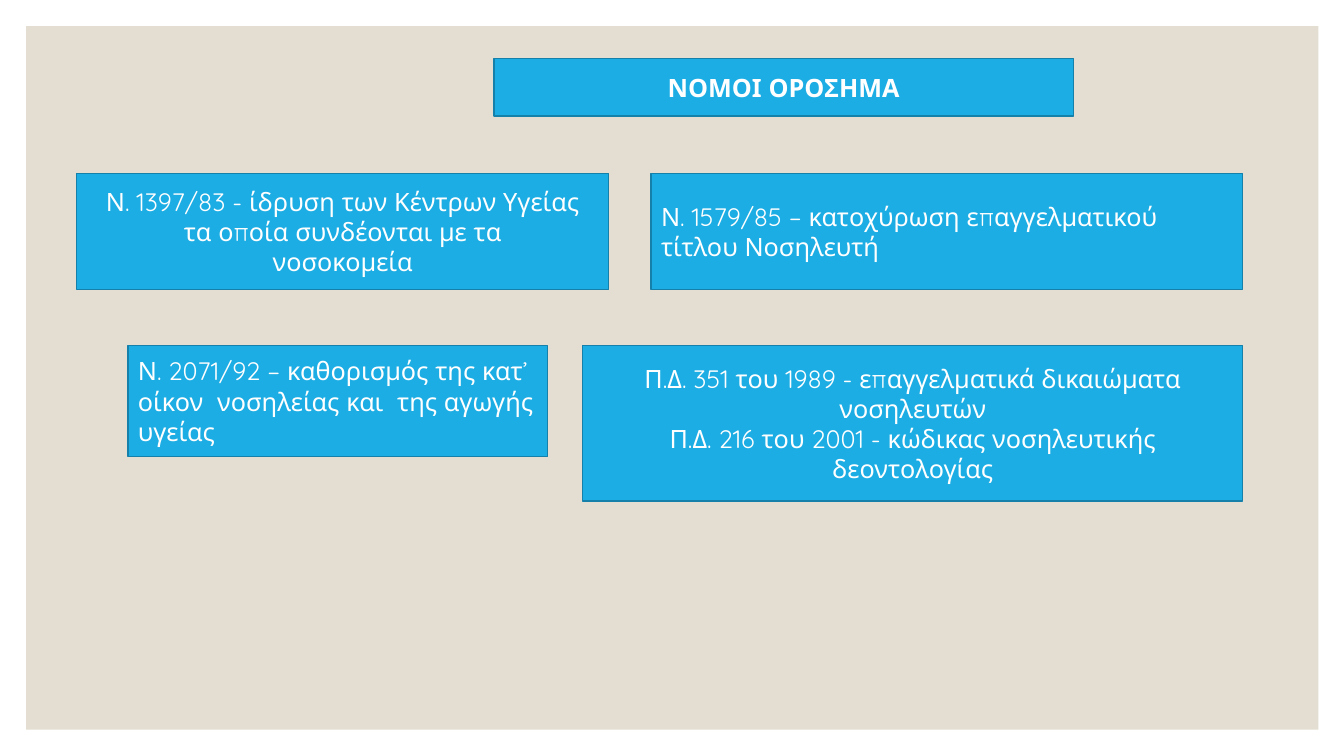
from dataclasses import dataclass

from pptx import Presentation
from pptx.dml.color import RGBColor
from pptx.enum.shapes import MSO_SHAPE
from pptx.enum.text import MSO_ANCHOR, MSO_AUTO_SIZE, PP_ALIGN
from pptx.util import Pt

RECT = MSO_SHAPE.RECTANGLE
MIDDLE = MSO_ANCHOR.MIDDLE
NO_FIT = MSO_AUTO_SIZE.NONE
LEFT, CENTER = PP_ALIGN.LEFT, PP_ALIGN.CENTER

FONT = "Quicksand"
SAND, BLUE, EDGE, WHITE = "E3DED1", "1CADE4", "1580A9", "FFFFFF"
ROW_1, ROW_2 = 123.84, 246.96  # tops of the two rows of laws


@dataclass
class Box:
    left: float
    top: float
    width: float
    height: float
    lines: list[str]
    align: PP_ALIGN = CENTER
    bold: bool = False


TITLE = Box(352.8, 41.76, 414, 41.04, ["ΝΟΜΟΙ ΟΡΟΣΗΜΑ"], bold=True)
LAWS = [
    Box(54.72, ROW_1, 380.16, 82.8,
        ["Ν. 1397/83 - ίδρυση των Κέντρων Υγείας",
         "τα οποία συνδέονται με τα",
         "νοσοκομεία"]),
    Box(465.12, ROW_1, 422.64, 82.8,
        ["Ν. 1579/85 – κατοχύρωση επαγγελματικού τίτλου Νοσηλευτή"], LEFT),
    Box(91.44, ROW_2, 299.52, 79.2,
        ["Ν. 2071/92 – καθορισμός της κατ’ οίκον  νοσηλείας και  της αγωγής υγείας"],
        LEFT),
    Box(416.16, ROW_2, 471.6, 110.88,
        ["Π.Δ. 351 του 1989 - επαγγελματικά δικαιώματα νοσηλευτών",
         "Π.Δ. 216 του 2001 - κώδικας νοσηλευτικής δεοντολογίας"]),
]


def paint(target, color: str) -> None:
    """Give a fill one solid colour."""
    target.solid()
    target.fore_color.rgb = RGBColor.from_string(color)


def add_rect(slide, left: float, top: float, width: float, height: float):
    shape = slide.shapes.add_shape(RECT, Pt(left), Pt(top), Pt(width), Pt(height))
    shape.shadow.inherit = False
    return shape


def dress(shape, box: Box) -> None:
    """Fill and outline a shape, and set its text."""
    paint(shape.fill, BLUE)
    paint(shape.line.fill, EDGE)
    shape.line.width = Pt(1)
    frame = shape.text_frame
    frame.text = "\n".join(box.lines)
    frame.word_wrap = True
    frame.auto_size = NO_FIT
    frame.vertical_anchor = MIDDLE
    for par in frame.paragraphs:
        par.alignment = box.align
        par.font.name = FONT
        par.font.size = Pt(18)
        par.font.bold = box.bold
        paint(par.font.fill, WHITE)


def main() -> None:
    deck = Presentation()
    deck.slide_width, deck.slide_height = Pt(960), Pt(540)
    slide = deck.slides.add_slide(deck.slide_layouts[5])
    paint(slide.background.fill, WHITE)

    # Title
    title = slide.shapes.title
    title.left, title.top = Pt(TITLE.left), Pt(TITLE.top)
    title.width, title.height = Pt(TITLE.width), Pt(TITLE.height)
    dress(title, TITLE)

    # Sand panel, placed behind the title
    panel = add_rect(slide, 18.72, 18.72, 923.04, 502.56)
    paint(panel.fill, SAND)
    panel.line.fill.background()
    title.element.addprevious(panel.element)

    # Laws
    for law in LAWS:
        dress(add_rect(slide, law.left, law.top, law.width, law.height), law)

    deck.save("out.pptx")


if __name__ == "__main__":
    main()
